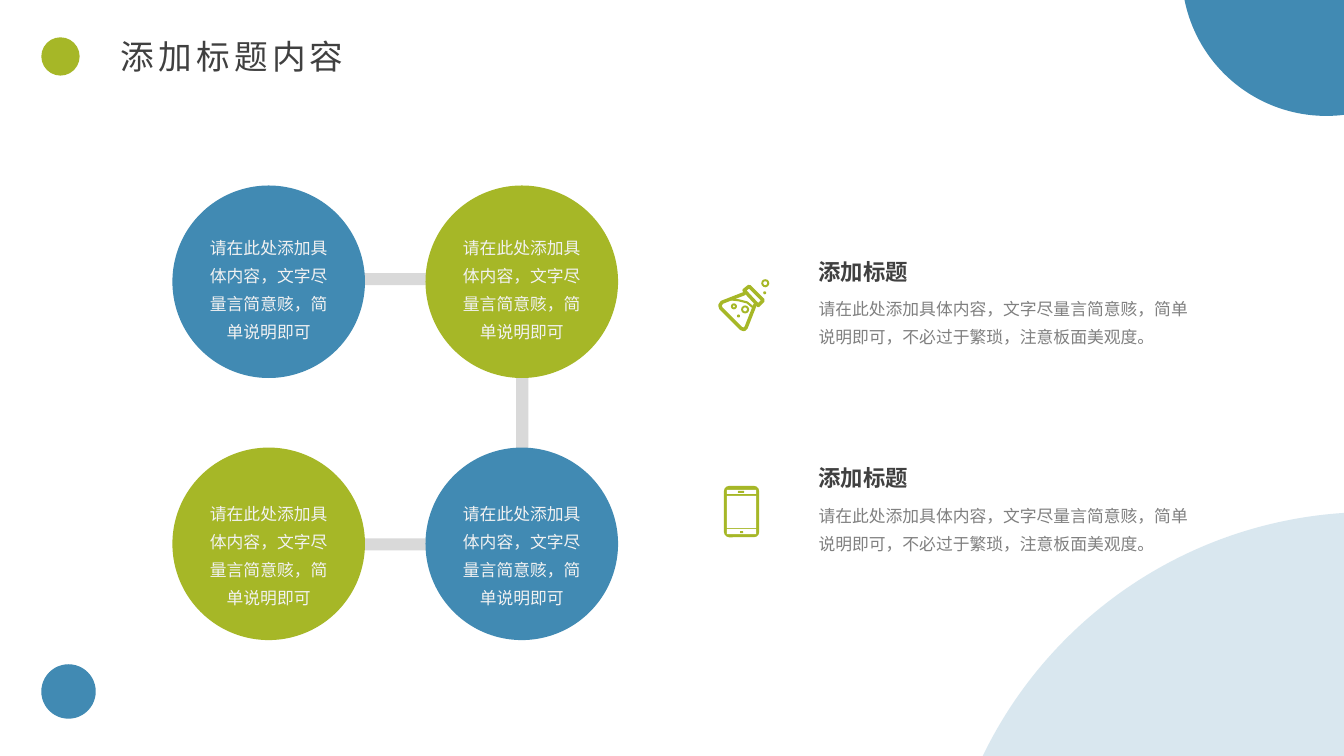
from lxml import etree
from pptx import Presentation
from pptx.dml.color import RGBColor
from pptx.enum import shapes, text
from pptx.oxml.ns import qn
from pptx.util import Inches, Pt

BLUE = RGBColor(0x41, 0x8A, 0xB3)
GREEN = RGBColor(0xA6, 0xB7, 0x27)
WHITE = RGBColor(0xFF, 0xFF, 0xFF)
PALE = RGBColor(0xF2, 0xF2, 0xF2)
BAR = RGBColor(0xD9, 0xD9, 0xD9)
DARK = RGBColor(0x40, 0x40, 0x40)
GREY = RGBColor(0x80, 0x80, 0x80)
CJK = "Noto Sans CJK SC"
OVAL = shapes.MSO_SHAPE.OVAL
RECT = shapes.MSO_SHAPE.RECTANGLE
ROUNDED = shapes.MSO_SHAPE.ROUNDED_RECTANGLE
DISC = shapes.MSO_SHAPE.FLOWCHART_CONNECTOR
RING = shapes.MSO_SHAPE.DONUT

CIRCLE_TEXT = "请在此处添加具体内容，文字尽量言简意赅，简单说明即可"
ITEM_TITLE = "添加标题"
ITEM_TEXT = "请在此处添加具体内容，文字尽量言简意赅，简单说明即可，不必过于繁琐，注意板面美观度。"


def add_solid(slide, kind, x, y, w, h, color, alpha=None):
    sp = slide.shapes.add_shape(kind, Inches(x), Inches(y), Inches(w), Inches(h))
    sp.shadow.inherit = False
    sp.fill.solid()
    sp.fill.fore_color.rgb = color
    sp.line.fill.background()
    if alpha is not None:
        clr = sp._element.spPr.find(".//" + qn("a:srgbClr"))
        etree.SubElement(clr, qn("a:alpha")).set("val", str(alpha * 1000))
    return sp


def add_outline(slide, points, width, close=True):
    start, *rest = [(Inches(x), Inches(y)) for x, y in points]
    builder = slide.shapes.build_freeform(*start, scale=1.0)
    builder.add_line_segments(rest, close=close)
    sp = builder.convert_to_shape()
    sp.shadow.inherit = False
    sp.fill.background()
    sp.line.color.rgb = GREEN
    sp.line.width = Pt(width)
    etree.SubElement(sp.line._get_or_add_ln(), qn("a:round"))


def write_text(sp, words, size, color, align=None, spacing=None, bold=False, font=CJK):
    tf = sp.text_frame
    tf.word_wrap = True
    tf.auto_size = text.MSO_AUTO_SIZE.SHAPE_TO_FIT_TEXT
    tf.vertical_anchor = text.MSO_ANCHOR.TOP
    p = tf.paragraphs[0]
    p.alignment = align
    p.line_spacing = spacing
    r = p.add_run()
    r.text = words
    r.font.size = Pt(size)
    r.font.bold = bold
    r.font.color.rgb = color
    r.font.name = font
    etree.SubElement(r._r.rPr, qn("a:ea")).set("typeface", CJK)
    return r


def add_text(slide, x, y, w, h, words, size, color, **style):
    box = slide.shapes.add_textbox(Inches(x), Inches(y), Inches(w), Inches(h))
    write_text(box, words, size, color, **style)


def add_title(slide):
    title = slide.shapes.title
    title.left, title.top = Inches(1.1), Inches(0.31)
    title.width, title.height = Inches(2.56), Inches(0.5)
    r = write_text(title, "添加标题内容", 24, DARK,
                   align=text.PP_ALIGN.JUSTIFY, font="Arial")
    r._r.rPr.set("spc", "300")


def add_circles(slide):
    # Bars joining the circles
    for x, y, w, h in ((2.71, 2.71, 2.17, 0.12), (2.82, 5.34, 2.17, 0.12),
                       (5.12, 3.18, 0.12, 2.17)):
        add_solid(slide, RECT, x, y, w, h, BAR)
    # Two by two grid, colours alternating
    for row, (top, text_top) in enumerate(((1.84, 2.23), (4.44, 4.87))):
        for col, left in enumerate((1.71, 4.22)):
            color = GREEN if (row + col) % 2 else BLUE
            add_solid(slide, OVAL, left, top, 1.91, 1.91, color)
            add_text(slide, left + 0.21, text_top, 1.49, 1.21, CIRCLE_TEXT, 12, PALE,
                     align=text.PP_ALIGN.CENTER, spacing=Pt(20))


def add_flask(slide):
    # Body, lip and liquid level
    add_outline(slide, [(7.39, 2.91), (7.16, 3.0), (7.14, 3.03), (7.15, 3.06), (7.35, 3.26),
                        (7.38, 3.27), (7.4, 3.25), (7.49, 3.02)], 2.5, close=False)
    add_outline(slide, [(7.38, 2.88), (7.43, 2.84), (7.57, 2.98), (7.52, 3.03)], 2.5)
    add_outline(slide, [(7.25, 2.97), (7.33, 2.98), (7.41, 3.0), (7.47, 3.05)],
                1.5, close=False)
    # Bubbles
    for x, y, size in ((7.35, 3.03, 0.08), (7.55, 2.77, 0.08), (7.25, 3.01, 0.06)):
        ring = add_solid(slide, RING, x, y, size, size, GREEN)
        ring.adjustments[0] = 0.02 / size
    for x, y in ((7.31, 3.12), (7.57, 2.89)):
        add_solid(slide, OVAL, x, y, 0.03, 0.03, GREEN)


def add_phone(slide):
    body = add_solid(slide, ROUNDED, 7.18, 4.82, 0.35, 0.51, GREEN)
    body.adjustments[0] = 0.15
    # Earpiece strip, screen and button strip
    for y, h in ((4.86, 0.04), (4.92, 0.32), (5.25, 0.05)):
        add_solid(slide, RECT, 7.21, y, 0.29, h, WHITE)
    for x, y, w in ((7.32, 4.87, 0.06), (7.34, 5.27, 0.03)):
        add_solid(slide, ROUNDED, x, y, w, 0.02, GREEN)


def add_item(slide, top):
    add_text(slide, 8.02, top + 0.33, 3.97, 0.66, ITEM_TEXT, 12, GREY, spacing=Pt(20))
    add_text(slide, 8.02, top, 1.19, 0.37, ITEM_TITLE, 16, DARK, bold=True)


def add_decoration(slide):
    add_solid(slide, DISC, 9.32, 5.08, 8.57, 8.57, BLUE, alpha=20)
    for x, y, size, color in ((11.72, -1.72, 2.87, BLUE), (0.41, 6.59, 0.54, BLUE),
                              (0.41, 0.37, 0.38, GREEN)):
        add_solid(slide, DISC, x, y, size, size, color)


def main():
    prs = Presentation()
    prs.slide_width, prs.slide_height = Inches(13.33), Inches(7.5)
    slide = prs.slides.add_slide(prs.slide_layouts[5])
    add_title(slide)
    add_circles(slide)
    add_flask(slide)
    add_phone(slide)
    for top in (2.51, 4.56):
        add_item(slide, top)
    add_decoration(slide)
    prs.save("out.pptx")


if __name__ == "__main__":
    main()
